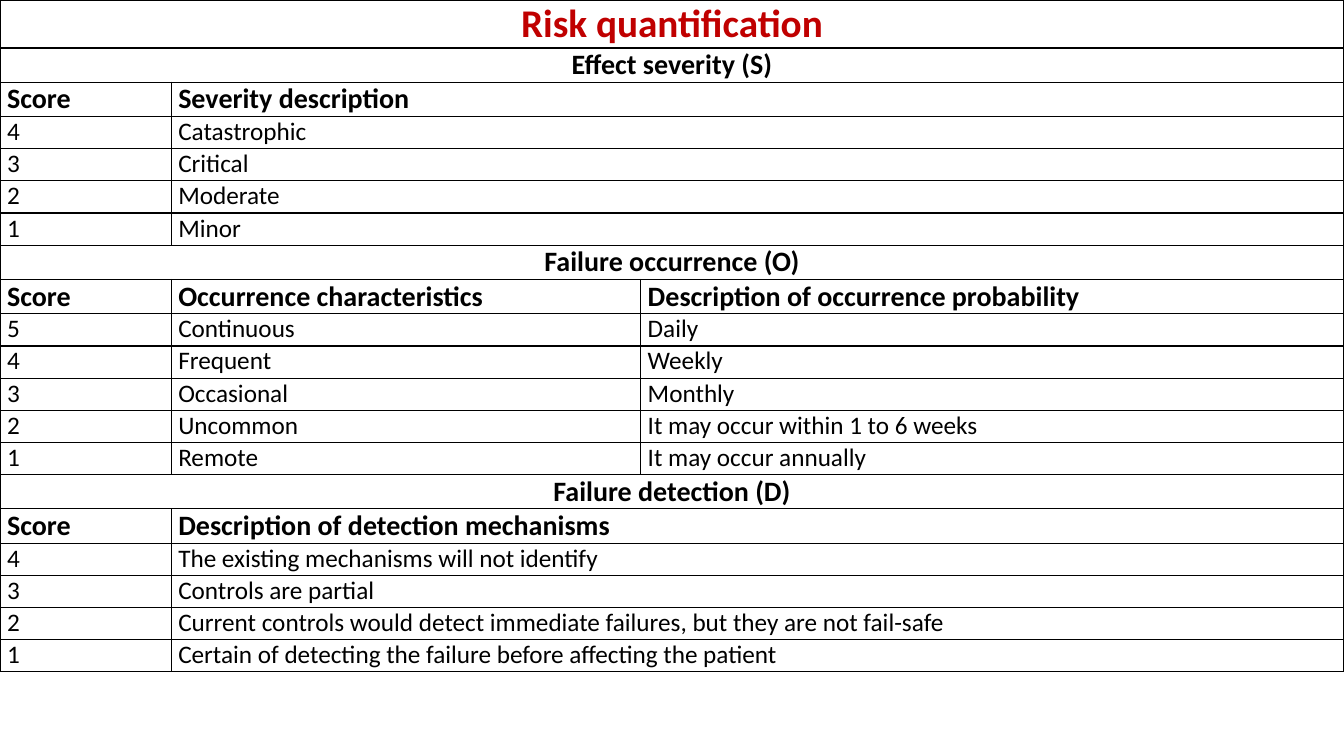
from dataclasses import dataclass

from lxml.etree import SubElement
from pptx import Presentation
from pptx.dml.color import RGBColor
from pptx.enum.text import MSO_ANCHOR, PP_ALIGN
from pptx.oxml.ns import qn
from pptx.table import Table, _Cell
from pptx.util import Inches, Pt

SLIDE_WIDTH, SLIDE_HEIGHT = Inches(13.33), Inches(7.5)
COLUMN_SHARES = (1.7, 4.66, 6.98)
COLUMN_UNIT = SLIDE_WIDTH / sum(COLUMN_SHARES)
ROW_HEIGHT = int(SLIDE_HEIGHT / 23.5)
TITLE_ROWS = 1.4

BLACK = RGBColor(0x00, 0x00, 0x00)
RED = RGBColor(0xC0, 0x00, 0x00)
BORDER_WIDTH = Pt(1)
CELL_FORMAT = {
    "margin_left": Inches(0.07),
    "margin_right": Inches(0.07),
    "margin_top": 0,
    "margin_bottom": 0,
    "vertical_anchor": MSO_ANCHOR.TOP,
}


@dataclass(frozen=True)
class RowStyle:
    size: int
    bold: bool
    color: RGBColor = BLACK
    align: PP_ALIGN = PP_ALIGN.LEFT


TITLE = RowStyle(28, True, RED, PP_ALIGN.CENTER)
HEADING = RowStyle(20, True, align=PP_ALIGN.CENTER)
COLUMN_HEADS = RowStyle(20, True)
LEVEL = RowStyle(18, False)


@dataclass(frozen=True)
class Scale:
    """A rating scale whose levels run from the highest score down to 1."""
    heading: str
    columns: tuple[str, ...]
    levels: tuple[tuple[str, ...], ...]


@dataclass(frozen=True)
class Row:
    texts: tuple[str, ...]
    style: RowStyle


SCALES = (
    Scale("Effect severity (S)", ("Severity description",),
          (("Catastrophic",), ("Critical",), ("Moderate",), ("Minor",))),
    Scale("Failure occurrence (O)",
          ("Occurrence characteristics", "Description of occurrence probability"),
          (("Continuous", "Daily"),
           ("Frequent", "Weekly"),
           ("Occasional", "Monthly"),
           ("Uncommon", "It may occur within 1 to 6 weeks"),
           ("Remote", "It may occur annually"))),
    Scale("Failure detection (D)", ("Description of detection mechanisms",),
          (("The existing mechanisms will not identify",),
           ("Controls are partial",),
           ("Current controls would detect immediate failures, but they are not fail-safe",),
           ("Certain of detecting the failure before affecting the patient",))),
)


def scale_rows(scale: Scale) -> list[Row]:
    top_score = len(scale.levels)
    return [
        Row((scale.heading,), HEADING),
        Row(("Score", *scale.columns), COLUMN_HEADS),
        *(Row((str(top_score - step), *level), LEVEL)
          for step, level in enumerate(scale.levels)),
    ]


def format_cell(cell: _Cell) -> None:
    for name, value in CELL_FORMAT.items():
        setattr(cell, name, value)
    properties = cell._tc.get_or_add_tcPr()
    for side in ("a:lnL", "a:lnR", "a:lnT", "a:lnB"):
        border = SubElement(properties, qn(side), w=str(BORDER_WIDTH))
        fill = SubElement(border, qn("a:solidFill"))
        SubElement(fill, qn("a:srgbClr"), val=str(BLACK))
    cell.fill.background()


def write_cell(cell: _Cell, text: str, style: RowStyle) -> None:
    paragraph = cell.text_frame.paragraphs[0]
    paragraph.alignment = style.align
    run = paragraph.add_run()
    run.text = text
    font_format = {"name": "Calibri", "size": Pt(style.size), "bold": style.bold}
    for name, value in font_format.items():
        setattr(run.font, name, value)
    run.font.color.rgb = style.color


def fill_row(table: Table, index: int, row: Row) -> None:
    """Write the row's texts, its last one spanning the columns left over."""
    cells = [table.cell(index, column) for column in range(len(COLUMN_SHARES))]
    for cell in cells:
        format_cell(cell)
    last = len(row.texts) - 1
    if cells[last] is not cells[-1]:
        cells[last].merge(cells[-1])
    for cell, text in zip(cells, row.texts):
        write_cell(cell, text, row.style)


def main() -> None:
    presentation = Presentation()
    presentation.slide_width, presentation.slide_height = SLIDE_WIDTH, SLIDE_HEIGHT
    slide = presentation.slides.add_slide(presentation.slide_layouts[6])

    rows = [Row(("Risk quantification",), TITLE)]
    for scale in SCALES:
        rows.extend(scale_rows(scale))

    risk_table = slide.shapes.add_table(
        len(rows), len(COLUMN_SHARES), 0, 0, SLIDE_WIDTH, ROW_HEIGHT * len(rows)).table
    risk_table.first_row = risk_table.horz_banding = False
    for column, share in zip(risk_table.columns, COLUMN_SHARES):
        column.width = int(share * COLUMN_UNIT)
    risk_table.rows[0].height = int(ROW_HEIGHT * TITLE_ROWS)
    for index, row in enumerate(rows):
        fill_row(risk_table, index, row)

    presentation.save("out.pptx")


if __name__ == "__main__":
    main()
